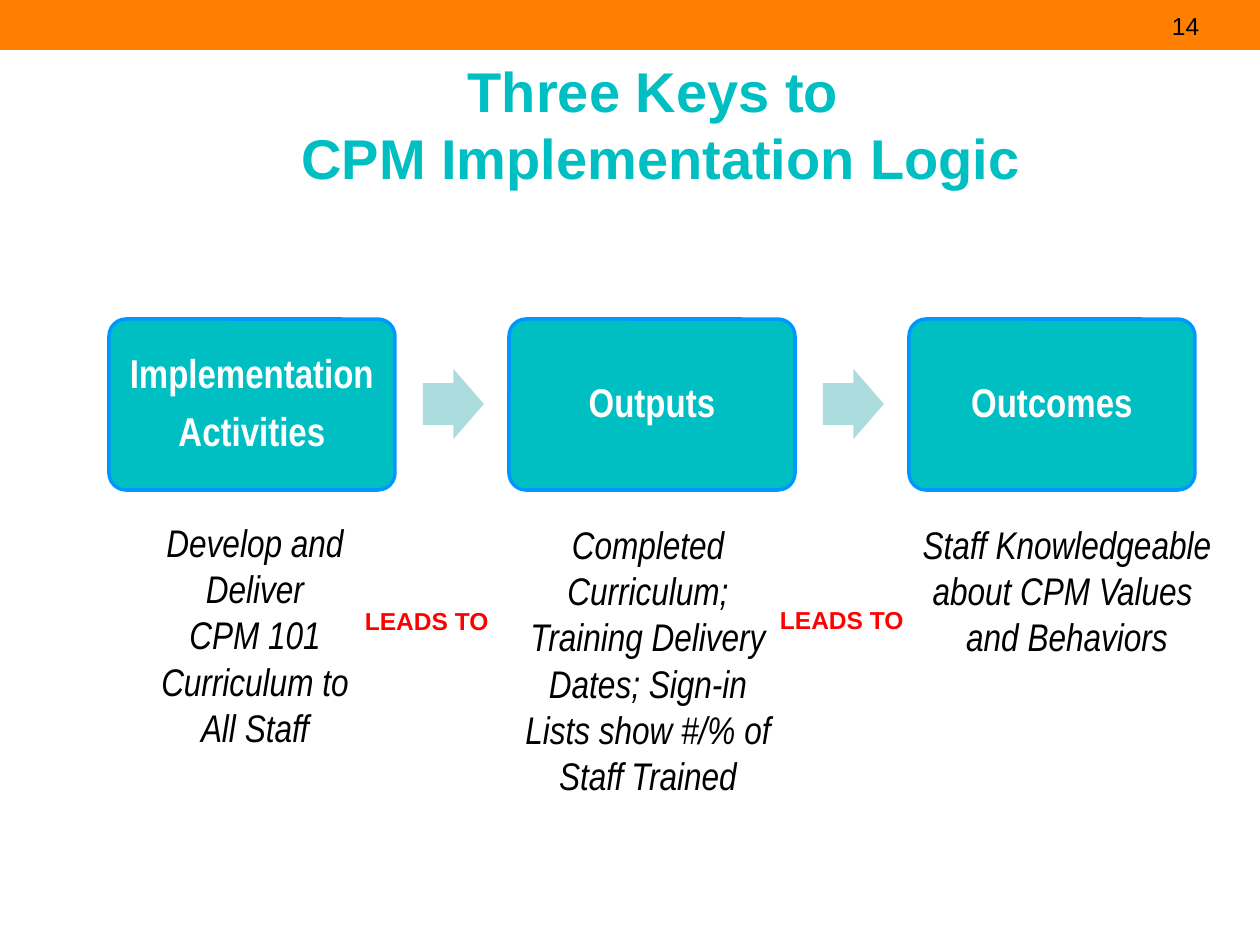
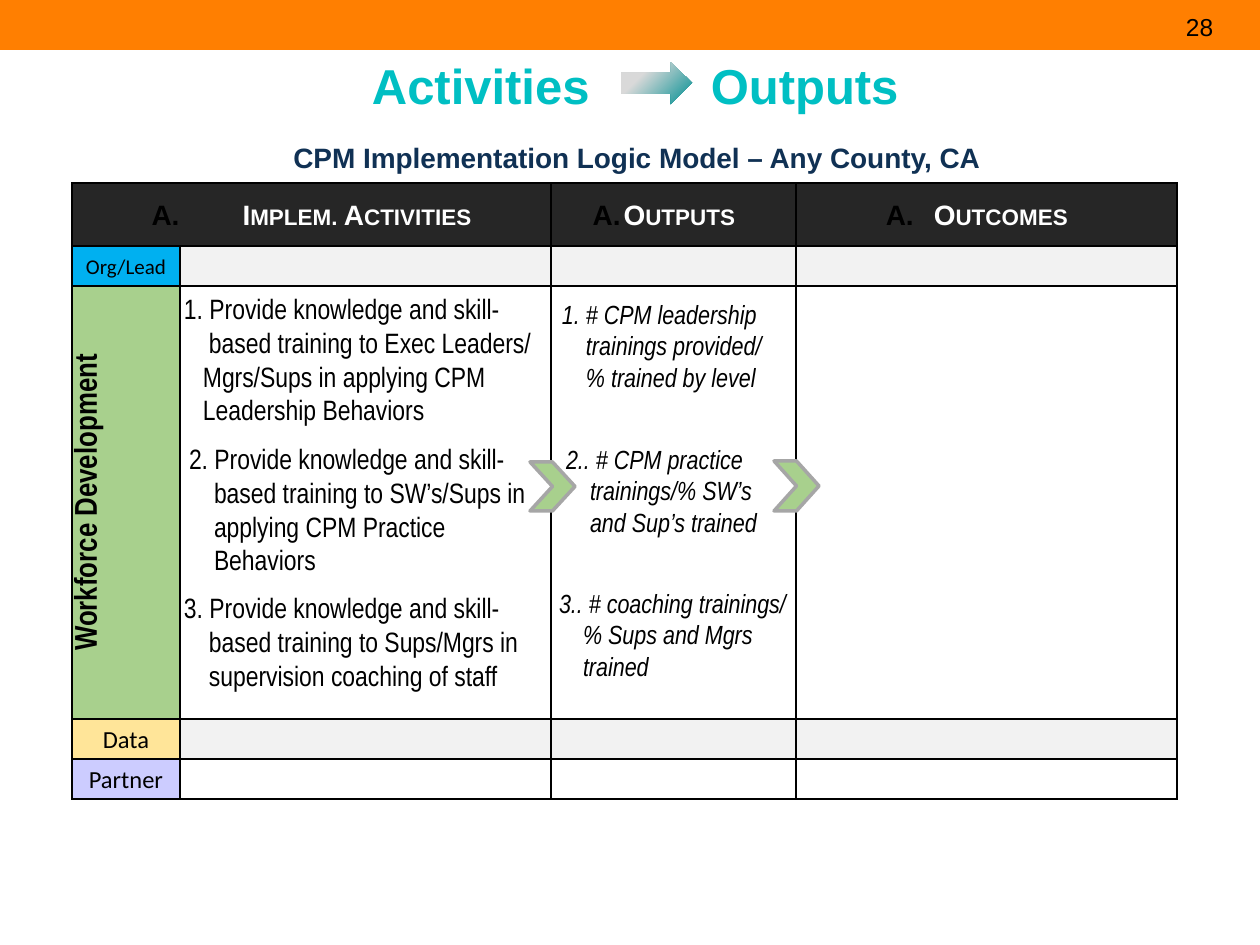
"""Build two slides on the logic of CPM implementation."""
from lxml.etree import SubElement
from pptx import Presentation
from pptx.dml.color import RGBColor
from pptx.enum.shapes import MSO_SHAPE
from pptx.enum.text import MSO_ANCHOR, PP_ALIGN
from pptx.oxml.ns import qn
from pptx.util import Pt

ORANGE = RGBColor(0xFF, 0x7F, 0x01)
TEAL = RGBColor(0x00, 0xBF, 0xC3)
DEEP_TEAL = RGBColor(0x00, 0x8F, 0x92)
PALE_TEAL = RGBColor(0xAB, 0xDC, 0xDE)
BLUE = RGBColor(0x00, 0x96, 0xFF)
NAVY = RGBColor(0x10, 0x31, 0x54)
RED = RGBColor(0xFF, 0x00, 0x00)
BLACK = RGBColor(0x00, 0x00, 0x00)
WHITE = RGBColor(0xFF, 0xFF, 0xFF)
CHARCOAL = RGBColor(0x26, 0x26, 0x26)
GREY = RGBColor(0xA6, 0xA6, 0xA6)
SILVER = RGBColor(0xD9, 0xD9, 0xD9)
PALE_GREY = RGBColor(0xF2, 0xF2, 0xF2)
SKY = RGBColor(0x00, 0xB0, 0xF0)
GREEN = RGBColor(0xA8, 0xD0, 0x8D)
YELLOW = RGBColor(0xFF, 0xE5, 0x99)
LILAC = RGBColor(0xCC, 0xCC, 0xFF)

SLIDE_WIDTH, SLIDE_HEIGHT, BAND_HEIGHT = 1260, 945, 50
INSETS = (13, 6, 13, 6)

TITLE = dict(font="Arial", size=32, color=TEAL, bold=True)
HEADING = dict(TITLE, size=28)
SUBTITLE = dict(TITLE, size=16, color=NAVY)
PAGE_NUMBER = dict(font="Arial", size=14, color=BLACK)
LEADS_TO = dict(font="Arial", size=14, color=RED, bold=True)
KEY_NAME = dict(font="Arial Narrow", size=23, color=WHITE, bold=True)
KEY_DETAIL = dict(font="Arial Narrow", size=22, color=BLACK, italic=True)
ACTIVITY = dict(font="Arial Narrow", size=16, color=BLACK)
OUTPUT = dict(font="Arial Narrow", size=15, color=BLACK, italic=True)
COLUMN_NAME = dict(font="Arial", size=16, color=WHITE, bold=True)
SMALL_LABEL = dict(font="Calibri", size=12, color=BLACK)
LABEL = dict(SMALL_LABEL, size=14)
SIDE_LABEL = dict(font="Arial Narrow", size=18, color=BLACK, bold=True)

KEYS = [
    (["Implementation", "Activities"], (110, 513, 290, 246),
     ["Develop and Deliver", "CPM 101 Curriculum to", "All Staff"]),
    (["Outputs"], (503, 515, 290, 292),
     ["Completed Curriculum; Training Delivery Dates; Sign-in Lists show #/% of Staff Trained"]),
    (["Outcomes"], (908, 515, 318, 152),
     ["Staff Knowledgeable", "about CPM Values ", "and Behaviors"]),
]
KEY_LEFT, KEY_TOP, KEY_WIDTH, KEY_HEIGHT, KEY_STEP = 109, 319, 286, 171, 400
ARROW_WIDTH, ARROW_HEIGHT, ARROW_OFFSET = 61, 70, 314
LEADS_TO_PLACES = [(352, 600), (767, 599)]

TABLE_LEFT, TABLE_TOP = 72, 183
COLUMN_WIDTHS = [108, 371, 245, 381]
ROW_HEIGHTS = [63, 40, 433, 40, 40]
COLUMN_NAMES = [(0, "Implem. Activities", 91, 9), (2, "Outputs", 31, 28), (3, "Outcomes", 48, 28)]
ROW_LABELS = [
    ("Org/Lead", SMALL_LABEL, SKY, PALE_GREY),
    ("Workforce Development", SIDE_LABEL, GREEN, None),
    ("Data", LABEL, YELLOW, PALE_GREY),
    ("Partner", LABEL, LILAC, None),
]

ACTIVITIES = [
    ((171, 286, 374, 149), [
        ("1. Provide knowledge and skill-", 0),
        ("based training to Exec Leaders/", 25),
        ("Mgrs/Sups in applying CPM", 19),
        ("Leadership Behaviors", 19)]),
    ((176, 436, 372, 149), [
        ("2. Provide knowledge and skill-", 0),
        ("based training to SW’s/Sups in", 25),
        ("applying CPM Practice", 25),
        ("Behaviors", 25)]),
    ((171, 585, 374, 115), [
        ("3. Provide knowledge and skill-", 0),
        ("based training to Sups/Mgrs in", 25),
        ("supervision coaching of staff", 25)]),
]
OUTPUTS = [
    ((549, 292, 230, 108), [
        ("1. # CPM leadership", 0), ("trainings provided/", 24), ("% trained by level", 24)]),
    ((553, 437, 244, 108), [
        ("2.. # CPM practice", 0), ("trainings/% SW’s", 24), ("and Sup’s trained", 24)]),
    ((546, 581, 270, 108), [
        ("3.. # coaching trainings/", 0), ("% Sups and Mgrs", 24), ("trained", 24)]),
]
CHEVRONS = [(530, 462, 45, 49), (774, 461, 45, 50)]


def px(length):
    return round(length * 914400 / 126)


def add_run(paragraph, text, font, size, color, bold=False, italic=False):
    run = paragraph.add_run()
    run.text = text
    run.font.name, run.font.size = font, Pt(size)
    run.font.bold, run.font.italic = bold, italic
    run.font.color.rgb = color
    return run


def fill_frame(frame, lines, style, align=PP_ALIGN.LEFT, anchor=MSO_ANCHOR.TOP, insets=INSETS):
    frame.word_wrap = True
    frame.vertical_anchor = anchor
    frame.margin_left, frame.margin_top, frame.margin_right, frame.margin_bottom = map(px, insets)
    for index, line in enumerate(lines):
        text, indent = line if isinstance(line, tuple) else (line, 0)
        paragraph = frame.add_paragraph() if index else frame.paragraphs[0]
        paragraph.alignment = align
        if indent:
            paragraph._p.get_or_add_pPr().set("marL", str(px(indent)))
        for part, piece in enumerate(text.split("\n")):
            if part:
                paragraph.add_line_break()
            add_run(paragraph, piece, **style)


def add_text(slide, box, lines, style, **layout):
    shape = slide.shapes.add_textbox(*map(px, box))
    fill_frame(shape.text_frame, lines, style, **layout)
    return shape


def add_shape(slide, kind, box, fill=None, line=None, adjustments=()):
    shape = slide.shapes.add_shape(kind, *map(px, box))
    shape.shadow.inherit = False
    if fill is not None:
        shape.fill.solid()
        shape.fill.fore_color.rgb = fill
    if line is None:
        shape.line.fill.background()
    else:
        shape.line.color.rgb = line
        shape.line.width = Pt(2)
    for index, value in enumerate(adjustments):
        shape.adjustments[index] = value
    return shape


def add_base_slide(presentation, number, number_left, number_top):
    slide = presentation.slides.add_slide(presentation.slide_layouts[6])
    add_shape(slide, MSO_SHAPE.RECTANGLE, (0, 0, SLIDE_WIDTH, BAND_HEIGHT), ORANGE)
    add_text(slide, (number_left, number_top, 54, 43), [number], PAGE_NUMBER)
    return slide


def build_keys_slide(presentation):
    slide = add_base_slide(presentation, "14", 1159, 5)
    add_text(slide, (229, 56, 864, 136), ["Three Keys to \nCPM Implementation Logic"], TITLE,
             align=PP_ALIGN.CENTER, anchor=MSO_ANCHOR.MIDDLE)
    for index, (name, detail_box, detail) in enumerate(KEYS):
        left = KEY_LEFT + index * KEY_STEP
        key = add_shape(slide, MSO_SHAPE.ROUNDED_RECTANGLE,
                        (left, KEY_TOP, KEY_WIDTH, KEY_HEIGHT), TEAL, BLUE, [0.1])
        fill_frame(key.text_frame, name, KEY_NAME, PP_ALIGN.CENTER, MSO_ANCHOR.MIDDLE)
        for paragraph in key.text_frame.paragraphs:
            paragraph.line_spacing = 0.9
            paragraph.space_after = Pt(8)
        if index < len(KEYS) - 1:
            arrow_top = KEY_TOP + (KEY_HEIGHT - ARROW_HEIGHT) // 2
            add_shape(slide, MSO_SHAPE.RIGHT_ARROW,
                      (left + ARROW_OFFSET, arrow_top, ARROW_WIDTH, ARROW_HEIGHT),
                      PALE_TEAL, adjustments=[0.6, 0.5])
        add_text(slide, detail_box, detail, KEY_DETAIL, align=PP_ALIGN.CENTER)
    for left, top in LEADS_TO_PLACES:
        add_text(slide, (left, top, 152, 43), ["LEADS TO"], LEADS_TO)


def style_cell(cell, fill):
    if fill is None:
        cell.fill.background()
    else:
        cell.fill.solid()
        cell.fill.fore_color.rgb = fill
    cell.vertical_anchor = MSO_ANCHOR.MIDDLE
    cell.margin_left = cell.margin_right = px(9)
    cell.margin_top = cell.margin_bottom = 0
    properties = cell._tc.get_or_add_tcPr()
    for index, side in enumerate(("lnL", "lnR", "lnT", "lnB")):
        border = properties.makeelement(qn(f"a:{side}"), {"w": str(Pt(1))})
        color = SubElement(SubElement(border, qn("a:solidFill")), qn("a:srgbClr"))
        color.set("val", str(BLACK))
        properties.insert(index, border)


def write_cell(cell, text, style):
    paragraph = cell.text_frame.paragraphs[0]
    paragraph.alignment = PP_ALIGN.CENTER
    paragraph.line_spacing = 1.07
    return paragraph, add_run(paragraph, text, **style)


def write_column_name(cell, text, indent, right_margin):
    cell.margin_right = px(right_margin)
    paragraph, run = write_cell(cell, text, COLUMN_NAME)
    run._r.get_or_add_rPr().set("cap", "small")
    properties = paragraph._p.get_or_add_pPr()
    properties.set("marL", str(px(indent)))
    properties.set("indent", str(-px(indent)))
    SubElement(SubElement(properties, qn("a:buClr")), qn("a:srgbClr")).set("val", str(BLACK))
    SubElement(properties, qn("a:buFont")).set("typeface", "Arial")
    SubElement(properties, qn("a:buAutoNum")).set("type", "alphaUcPeriod")


def add_logic_table(slide):
    box = (TABLE_LEFT, TABLE_TOP, sum(COLUMN_WIDTHS), sum(ROW_HEIGHTS))
    table = slide.shapes.add_table(len(ROW_HEIGHTS), len(COLUMN_WIDTHS), *map(px, box)).table
    for column, width in zip(table.columns, COLUMN_WIDTHS):
        column.width = px(width)
    for row, height in zip(table.rows, ROW_HEIGHTS):
        row.height = px(height)
    for cell in table.rows[0].cells:
        style_cell(cell, CHARCOAL)
    table.cell(0, 0).merge(table.cell(0, 1))
    for column, *heading in COLUMN_NAMES:
        write_column_name(table.cell(0, column), *heading)
    for row, (text, style, label_fill, row_fill) in enumerate(ROW_LABELS, 1):
        for column in range(len(COLUMN_WIDTHS)):
            style_cell(table.cell(row, column), row_fill if column else label_fill)
        write_cell(table.cell(row, 0), text, style)
    table.cell(2, 0)._tc.get_or_add_tcPr().set("vert", "vert270")


def build_model_slide(presentation):
    slide = add_base_slide(presentation, "28", 1173, 6)
    add_logic_table(slide)
    for items, style in ((ACTIVITIES, ACTIVITY), (OUTPUTS, OUTPUT)):
        for box, lines in items:
            add_text(slide, box, lines, style)
    for box in CHEVRONS:
        add_shape(slide, MSO_SHAPE.CHEVRON, box, GREEN, GREY)
    add_text(slide, (251, 136, 772, 43), ["CPM Implementation Logic Model – Any County, CA"],
             SUBTITLE, align=PP_ALIGN.CENTER, anchor=MSO_ANCHOR.MIDDLE)

    heading = add_text(slide, (359, 56, 595, 100), [], HEADING, insets=(13, 0, 13, 0))
    paragraph = heading.text_frame.paragraphs[0]
    tabs = SubElement(paragraph._p.get_or_add_pPr(), qn("a:tabLst"))
    SubElement(tabs, qn("a:tab"), pos=str(px(339)), algn="l")
    add_run(paragraph, "Activities\tOutputs", **HEADING)

    arrow = add_shape(slide, MSO_SHAPE.RIGHT_ARROW, (621, 62, 71, 42))
    arrow.fill.gradient()
    arrow.fill.gradient_angle = 135
    for stop, (position, color) in zip(arrow.fill.gradient_stops, [(0, DEEP_TEAL), (0.7, SILVER)]):
        stop.position = position
        stop.color.rgb = color


def main():
    presentation = Presentation()
    presentation.slide_width, presentation.slide_height = px(SLIDE_WIDTH), px(SLIDE_HEIGHT)
    build_keys_slide(presentation)
    build_model_slide(presentation)
    presentation.save("out.pptx")


if __name__ == "__main__":
    main()
